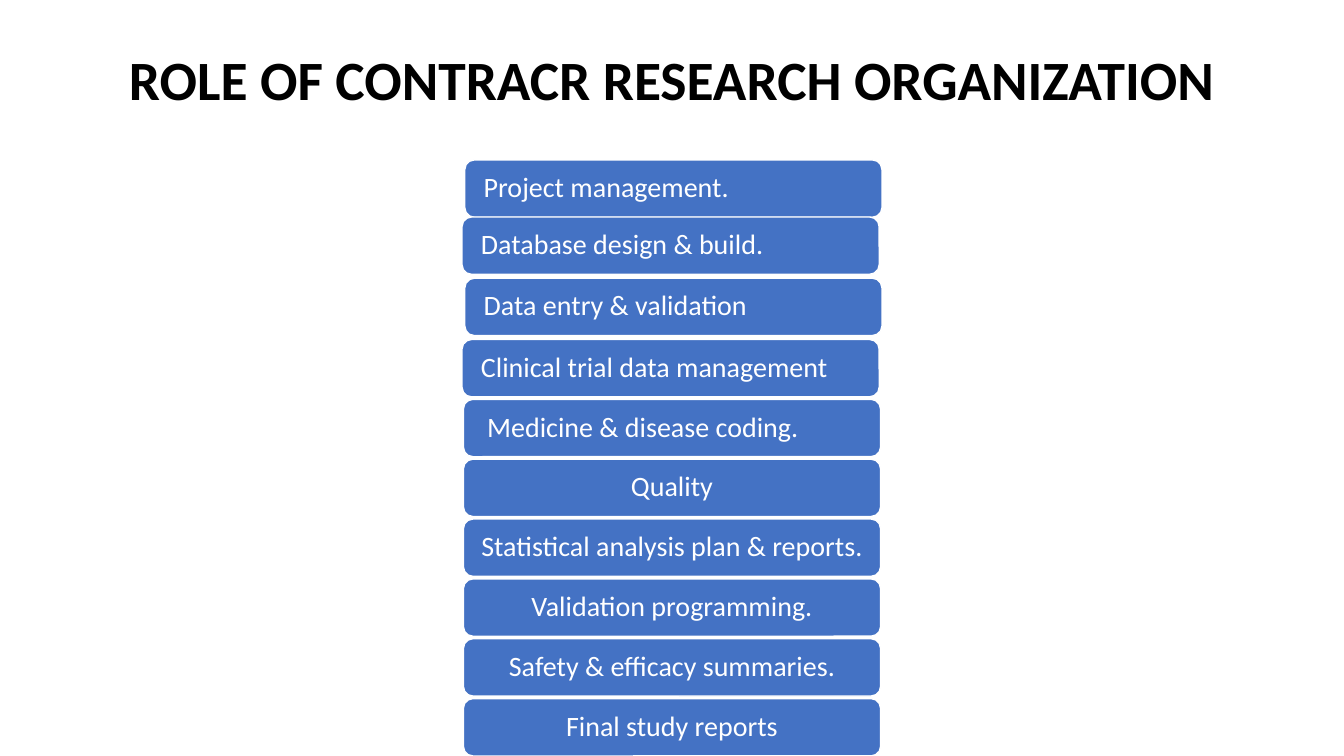
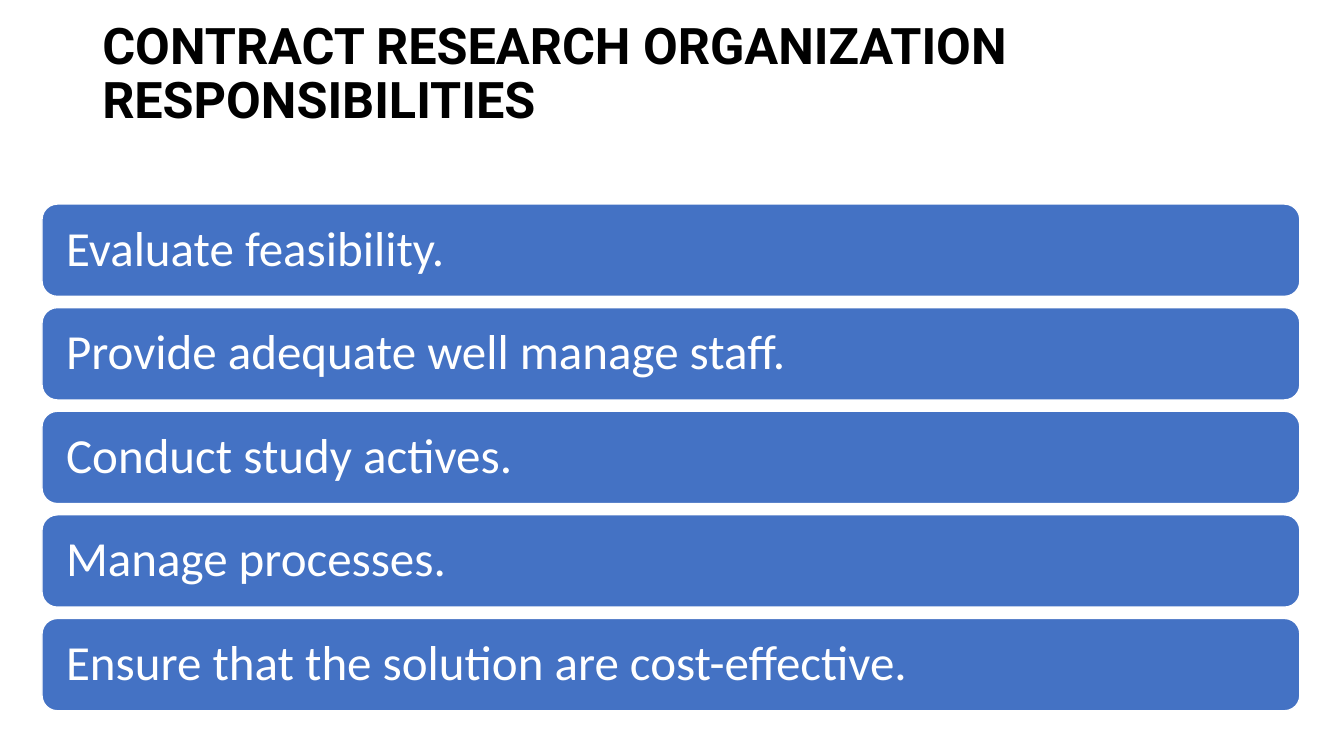
"""Build two slides on the role and responsibilities of a contract research organization."""
import pptx
import pptx.util
import pptx.dml.color
import pptx.enum.shapes
import pptx.enum.text

Pt = pptx.util.Pt
ALIGN = pptx.enum.text.PP_ALIGN
COLORS = {"title": "000000", "bar": "4472C4", "white": "FFFFFF"}


def write(frame, text, font, size, color, align, bold=False):
    frame.word_wrap = True
    frame.vertical_anchor = pptx.enum.text.MSO_ANCHOR.MIDDLE
    frame.text = text
    paragraph = frame.paragraphs[0]
    paragraph.alignment = align
    paragraph.line_spacing = 0.9
    run_font = paragraph.runs[0].font
    run_font.name, run_font.size, run_font.bold = font, Pt(size), bold
    run_font.color.rgb = pptx.dml.color.RGBColor.from_string(COLORS[color])


def add_bar(slide, text, left, top, width, height, size, align, inset):
    bar = slide.shapes.add_shape(
        pptx.enum.shapes.MSO_SHAPE.ROUNDED_RECTANGLE,
        Pt(left), Pt(top), Pt(width), Pt(height))
    bar.shadow.inherit = False
    bar.fill.solid()
    bar.fill.fore_color.rgb = pptx.dml.color.RGBColor.from_string(COLORS["bar"])
    bar.line.color.rgb = pptx.dml.color.RGBColor.from_string(COLORS["white"])
    bar.line.width = Pt(1)
    frame = bar.text_frame
    frame.margin_left, frame.margin_right = Pt(inset), Pt(8)
    frame.margin_top = frame.margin_bottom = Pt(3)
    write(frame, text, "Calibri", size, "white", align)


deck = pptx.Presentation()
deck.slide_width, deck.slide_height = Pt(960), Pt(540)

headings = [
    ("ROLE OF CONTRACR RESEARCH ORGANIZATION", 29, 60, "Calibri", 39.6, ALIGN.CENTER),
    ("CONTRACT RESEARCH ORGANIZATION RESPONSIBILITIES", 1.5, 104, "Roboto", 36, ALIGN.LEFT),
]
slides = []
for heading, top, height, font, size, align in headings:
    slide = deck.slides.add_slide(deck.slide_layouts[6])
    title = slide.shapes.add_textbox(Pt(66), Pt(top), Pt(828), Pt(height))
    write(title.text_frame, heading, font, size, "title", align, bold=True)
    slides.append(slide)
role_slide, duty_slide = slides

roles = [
    ("Project management.", 1, 0, ALIGN.LEFT, 11.5),
    ("Database design & build.", -1, -2, ALIGN.LEFT, 11.5),
    ("Data entry & validation", 1, -1, ALIGN.LEFT, 11.5),
    ("Clinical trial data management", -1, 0, ALIGN.LEFT, 11.5),
    ("Medicine & disease coding.", 0, 0, ALIGN.LEFT, 15),
    ("Quality", 0, 0, ALIGN.CENTER, 8),
    ("Statistical analysis plan & reports.", 0, 0, ALIGN.CENTER, 8),
    ("Validation programming.", 0, 0, ALIGN.CENTER, 8),
    ("Safety & efficacy summaries.", 0, 0, ALIGN.CENTER, 8),
    ("Final study reports", 0, 0, ALIGN.CENTER, 8),
]
for row, (role, shift_x, shift_y, align, inset) in enumerate(roles):
    add_bar(role_slide, role, 331 + shift_x, 114.25 + 42.75 * row + shift_y,
            298, 41, 20, align, inset)

duties = [
    "Evaluate feasibility.",
    "Provide adequate well manage staff.",
    "Conduct study actives.",
    "Manage processes.",
    "Ensure that the solution are cost-effective.",
]
for row, duty in enumerate(duties):
    add_bar(duty_slide, duty, 30, 145.75 + 74 * row, 898.5, 66, 35, ALIGN.LEFT, 14)

deck.save("out.pptx")
